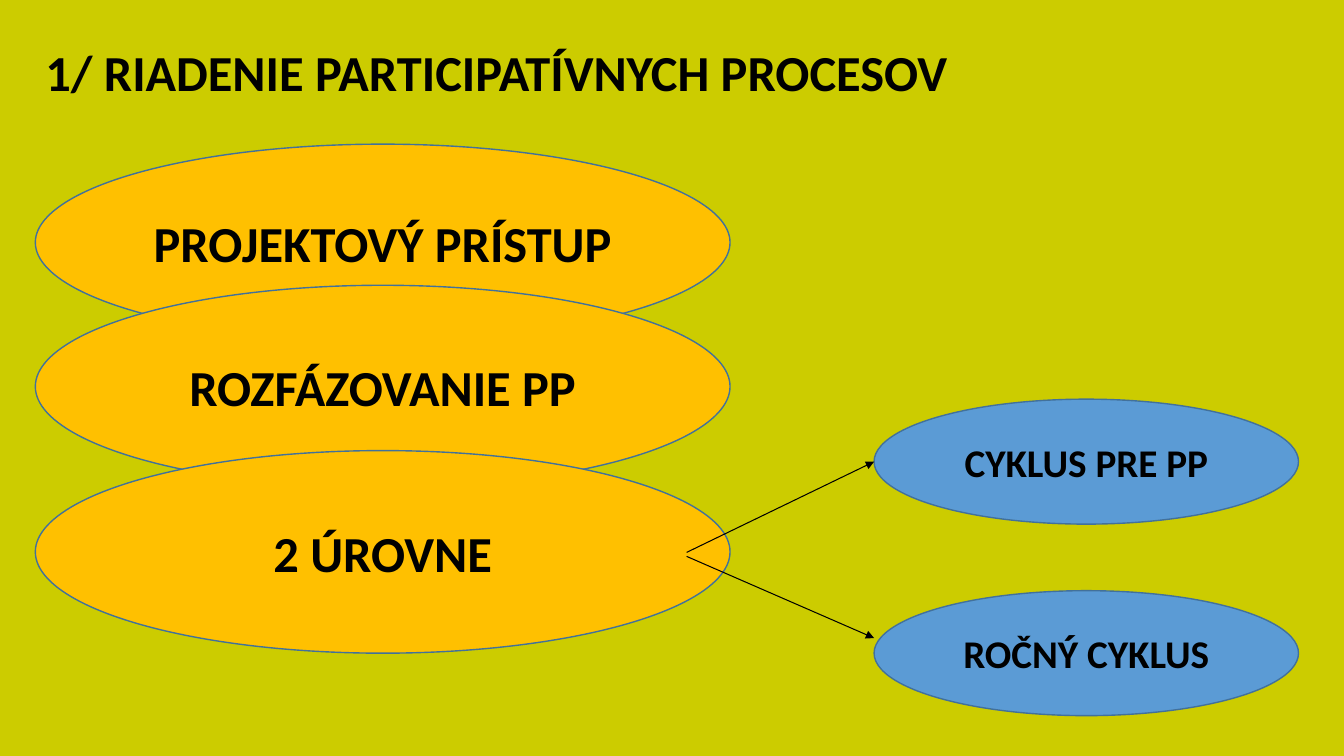
from dataclasses import dataclass

from lxml import etree
from pptx import Presentation
from pptx import util as u
from pptx.dml.color import RGBColor
from pptx.enum import shapes, text
from pptx.oxml.ns import qn

SLIDE_WIDTH = u.Inches(13.33)
SLIDE_HEIGHT = u.Inches(7.5)

OLIVE = RGBColor(0xCC, 0xCC, 0x00)
AMBER = RGBColor(0xFF, 0xC0, 0x00)
BLUE = RGBColor(0x5B, 0x9B, 0xD5)
OUTLINE = RGBColor(0x42, 0x71, 0x9B)
BLACK = RGBColor(0x00, 0x00, 0x00)

LEFT = 2.63
CYCLE_LEFT = 65.04
FORK_X = 51.09


@dataclass(frozen=True)
class EllipseStyle:
    left: float
    width: float
    fill: RGBColor
    font_size: int


@dataclass(frozen=True)
class Ellipse:
    label: str
    top: float
    height: float
    style: EllipseStyle


@dataclass(frozen=True)
class Arrow:
    start_y: float
    end_y: float


TOPIC = EllipseStyle(LEFT, 51.69, AMBER, 36)
CYCLE = EllipseStyle(CYCLE_LEFT, 31.58, BLUE, 28)

ELLIPSES = (
    Ellipse("PROJEKTOVÝ PRÍSTUP", 19.07, 26, TOPIC),
    Ellipse("ROZFÁZOVANIE PP", 37.73, 26.8, TOPIC),
    Ellipse("2 ÚROVNE", 59.6, 26.8, TOPIC),
    Ellipse("CYKLUS PRE PP", 52.8, 16.53, CYCLE),
    Ellipse("ROČNÝ CYKLUS", 78.13, 16.53, CYCLE),
)

ARROWS = (Arrow(73.6, 84.4), Arrow(73.07, 61.07))


def across(percent: float) -> u.Emu:
    return u.Emu(round(SLIDE_WIDTH * percent / 100))


def down(percent: float) -> u.Emu:
    return u.Emu(round(SLIDE_HEIGHT * percent / 100))


def format_text(frame, label: str, size: int, alignment, anchor) -> None:
    frame.text = label
    frame.word_wrap = True
    frame.vertical_anchor = anchor
    paragraph = frame.paragraphs[0]
    paragraph.alignment = alignment
    paragraph.font.name = "Calibri"
    paragraph.font.size = u.Pt(size)
    paragraph.font.bold = True
    paragraph.font.color.rgb = BLACK


def place_title(slide, label: str) -> None:
    title = slide.shapes.title
    title.left, title.top = across(LEFT), down(4.8)
    title.width, title.height = across(79.67), down(9.47)
    format_text(title.text_frame, label, 36,
                text.PP_ALIGN.LEFT, text.MSO_ANCHOR.TOP)
    title.text_frame.auto_size = text.MSO_AUTO_SIZE.NONE


def draw_ellipse(slide, ellipse: Ellipse) -> None:
    style = ellipse.style
    shape = slide.shapes.add_shape(
        shapes.MSO_SHAPE.OVAL, across(style.left), down(ellipse.top),
        across(style.width), down(ellipse.height))
    shape.shadow.inherit = False
    shape.fill.solid()
    shape.fill.fore_color.rgb = style.fill
    shape.line.color.rgb = OUTLINE
    shape.line.width = u.Pt(1)
    format_text(shape.text_frame, ellipse.label, style.font_size,
                text.PP_ALIGN.CENTER, text.MSO_ANCHOR.MIDDLE)


def draw_arrow(slide, arrow: Arrow) -> None:
    connector = slide.shapes.add_connector(
        shapes.MSO_CONNECTOR.STRAIGHT, across(FORK_X), down(arrow.start_y),
        across(CYCLE_LEFT), down(arrow.end_y))
    connector.line.color.rgb = BLACK
    connector.line.width = u.Pt(0.75)
    etree.SubElement(connector.line._get_or_add_ln(), qn("a:tailEnd"),
                     type="triangle")
    etree.SubElement(connector._element.spPr, qn("a:effectLst"))


def main() -> None:
    presentation = Presentation()
    presentation.slide_width = SLIDE_WIDTH
    presentation.slide_height = SLIDE_HEIGHT
    slide = presentation.slides.add_slide(presentation.slide_layouts[5])
    slide.background.fill.solid()
    slide.background.fill.fore_color.rgb = OLIVE
    place_title(slide, "1/ RIADENIE PARTICIPATÍVNYCH PROCESOV")
    for ellipse in ELLIPSES:
        draw_ellipse(slide, ellipse)
    for arrow in ARROWS:
        draw_arrow(slide, arrow)
    presentation.save("out.pptx")


if __name__ == "__main__":
    main()
